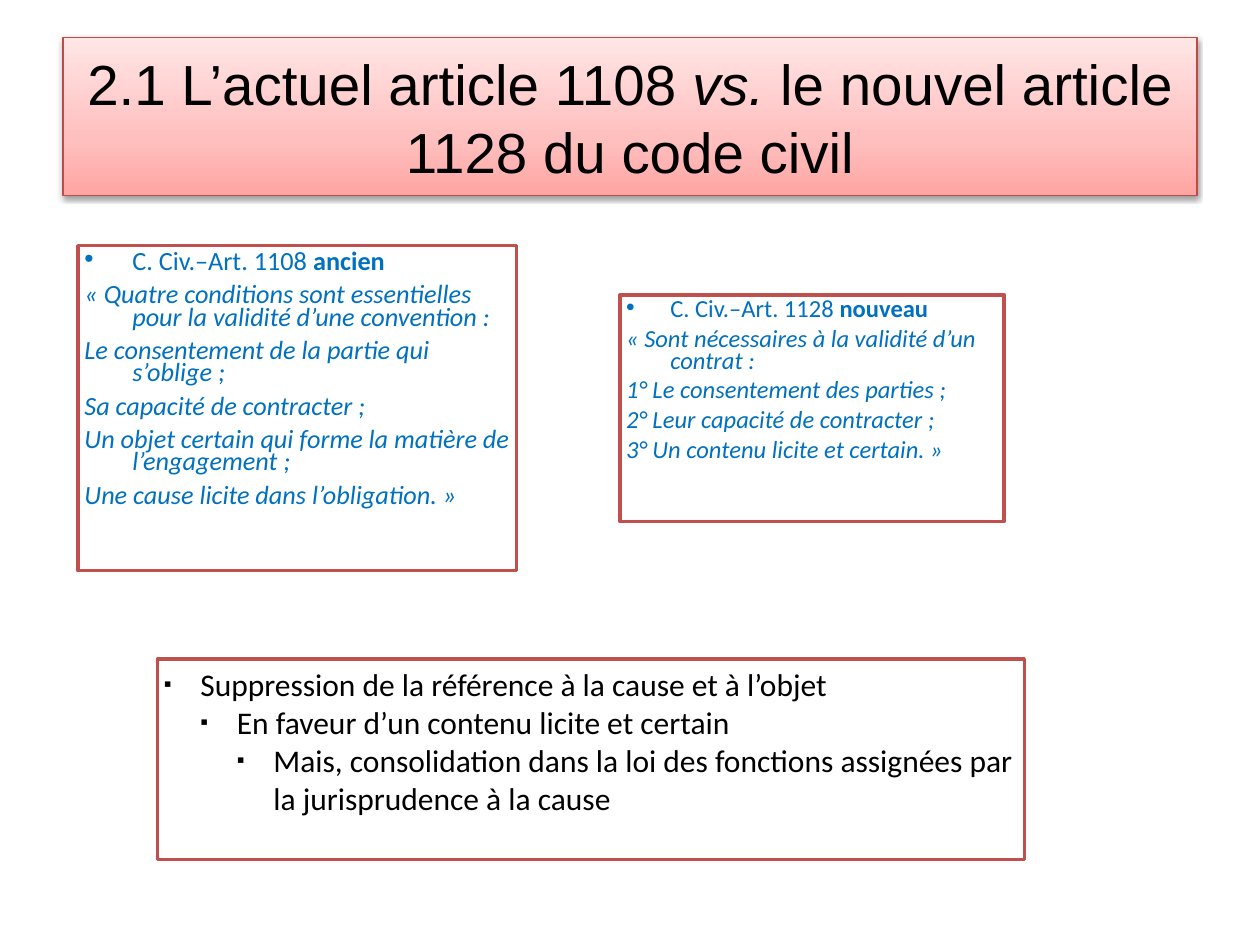
import copy

import lxml.etree
import pptx
import pptx.dml.color
import pptx.enum.dml
import pptx.enum.text
import pptx.oxml.ns
import pptx.util

Inches = pptx.util.Inches
Pt = pptx.util.Pt
qn = pptx.oxml.ns.qn

HUES = {
    "text": "000000",
    "law": "0070C0",
    "back": "FFFFFF",
    "frame": "C0504D",
    "edge": "BE4B48",
}
FADE = [(0, "FFA5A3"), (0.35, "FFBFBE"), (1, "FFE6E6")]

OLD = [
    "« Quatre conditions sont essentielles pour la validité d’une convention :",
    "Le consentement de la partie qui s’oblige ;",
    "Sa capacité de contracter ;",
    "Un objet certain qui forme la matière de l’engagement ;",
    "Une cause licite dans l’obligation. »",
]
NEW = [
    "« Sont nécessaires à la validité d’un contrat :",
    "1° Le consentement des parties ;",
    "2° Leur capacité de contracter ;",
    "3° Un contenu licite et certain. »",
]
NOTES = [
    "Suppression de la référence à la cause et à l’objet",
    "En faveur d’un contenu licite et certain",
    "Mais, consolidation dans la loi des fonctions assignées par "
    "la jurisprudence à la cause",
]


def rgb(code):
    return pptx.dml.color.RGBColor.from_string(code)


def add(node, tag, **attrs):
    child = lxml.etree.SubElement(node, qn(tag))
    for name, value in attrs.items():
        child.set(name, str(value))
    return child


class Deck:
    """Holds the style and the current slide."""

    def __init__(self):
        self.prs = pptx.Presentation()
        self.prs.slide_width = Inches(10)
        self.prs.slide_height = Inches(7.5)
        self.slide = self.prs.slides.add_slide(self.prs.slide_layouts[1])

    def place(self, shape, left, top, width, height):
        shape.left, shape.top = Inches(left), Inches(top)
        shape.width, shape.height = Inches(width), Inches(height)
        frame = shape.text_frame
        frame.word_wrap = True
        frame.auto_size = pptx.enum.text.MSO_AUTO_SIZE.NONE
        frame.margin_left = frame.margin_right = Inches(0.05)
        frame.margin_top = frame.margin_bottom = Inches(0.05)
        return frame

    def font(self, para, name, size, hue):
        para.font.name = name
        para.font.size = Pt(size)
        para.font.color.rgb = rgb(HUES[hue])

    def fade(self, shape):
        """Gives the shape the three-stop gradient, darkest at the foot."""
        shape.fill.gradient()
        shape.fill.gradient_angle = 90
        stops = shape._element.spPr.find(".//" + qn("a:gsLst"))
        stops.append(copy.deepcopy(stops[-1]))
        for stop, (spot, code) in zip(shape.fill.gradient_stops, FADE):
            stop.position = spot
            stop.color.rgb = rgb(code)

    def shade(self, shape):
        effects = add(shape._element.spPr, "a:effectLst")
        cast = add(effects, "a:outerShdw", blurRad=Pt(3), dist=Pt(1.6),
                   dir=5400000, rotWithShape=0)
        add(add(cast, "a:srgbClr", val="000000"), "a:alpha", val=38000)

    def title(self, parts):
        shape = self.slide.shapes.title
        frame = self.place(shape, 0.5, 0.3, 9, 1.25)
        frame.vertical_anchor = pptx.enum.text.MSO_ANCHOR.MIDDLE
        self.fade(shape)
        shape.line.color.rgb = rgb(HUES["edge"])
        shape.line.width = Pt(0.75)
        self.shade(shape)
        para = frame.paragraphs[0]
        para.alignment = pptx.enum.text.PP_ALIGN.CENTER
        self.font(para, "Arial", 32.3, "text")
        for text, slant in parts:
            run = para.add_run()
            run.text = text
            if slant:
                run.font.italic = True

    def box(self, spot, shape=None):
        """Frames the given placeholder, or a new text box."""
        shape = shape or self.slide.shapes.add_textbox(0, 0, 0, 0)
        frame = self.place(shape, *spot)
        frame.vertical_anchor = pptx.enum.text.MSO_ANCHOR.TOP
        shape.fill.solid()
        shape.fill.fore_color.rgb = rgb(HUES["back"])
        shape.line.color.rgb = rgb(HUES["frame"])
        shape.line.width = Pt(2)
        return frame

    def bullet(self, para, left, hang, mark=None, scale=100):
        props = para._p.get_or_add_pPr()
        props.set("marL", str(Inches(left)))
        props.set("indent", str(-Inches(hang)))
        if mark:
            add(props, "a:buSzPct", val=scale * 1000)
            add(props, "a:buFont", typeface="Arial")
            add(props, "a:buChar", char=mark)
        else:
            add(props, "a:buNone")

    def law(self, frame, head, state, lines, size, hang, gap):
        """Writes a bulleted heading and the italic text of the article."""
        for row, text in enumerate([head] + lines):
            para = frame.add_paragraph() if row else frame.paragraphs[0]
            para.line_spacing = 0.72
            para.space_before = Pt(gap)
            self.bullet(para, hang, hang, None if row else "•")
            self.font(para, "Calibri", size, "law")
            para.add_run().text = text
            if row:
                para.font.italic = True
            else:
                run = para.add_run()
                run.text = state
                run.font.bold = True

    def steps(self, frame, lines):
        """Writes each line one level deeper than the last."""
        hang = 0.29
        for level, text in enumerate(lines):
            para = frame.add_paragraph() if level else frame.paragraphs[0]
            para.level = level
            self.bullet(para, hang * (level + 1), hang, "▪", 70)
            self.font(para, "Calibri", 18, "text")
            para.add_run().text = text


def main():
    deck = Deck()
    deck.title([
        ("2.1 L’actuel article 1108 ", False),
        ("vs. ", True),
        ("le nouvel article 1128 du code civil", False),
    ])
    body = deck.slide.placeholders[1]
    left = deck.box((0.62, 1.95, 3.48, 2.58), body)
    deck.law(left, "C. Civ.–Art. 1108 ", "ancien", OLD, 15, 0.38, 6)
    right = deck.box((4.92, 2.34, 3.05, 1.8))
    deck.law(right, "C. Civ.–Art. 1128 ", "nouveau", NEW, 14, 0.35, 5)
    deck.steps(deck.box((1.25, 5.23, 6.88, 1.59)), NOTES)
    deck.prs.save("out.pptx")


if __name__ == "__main__":
    main()
